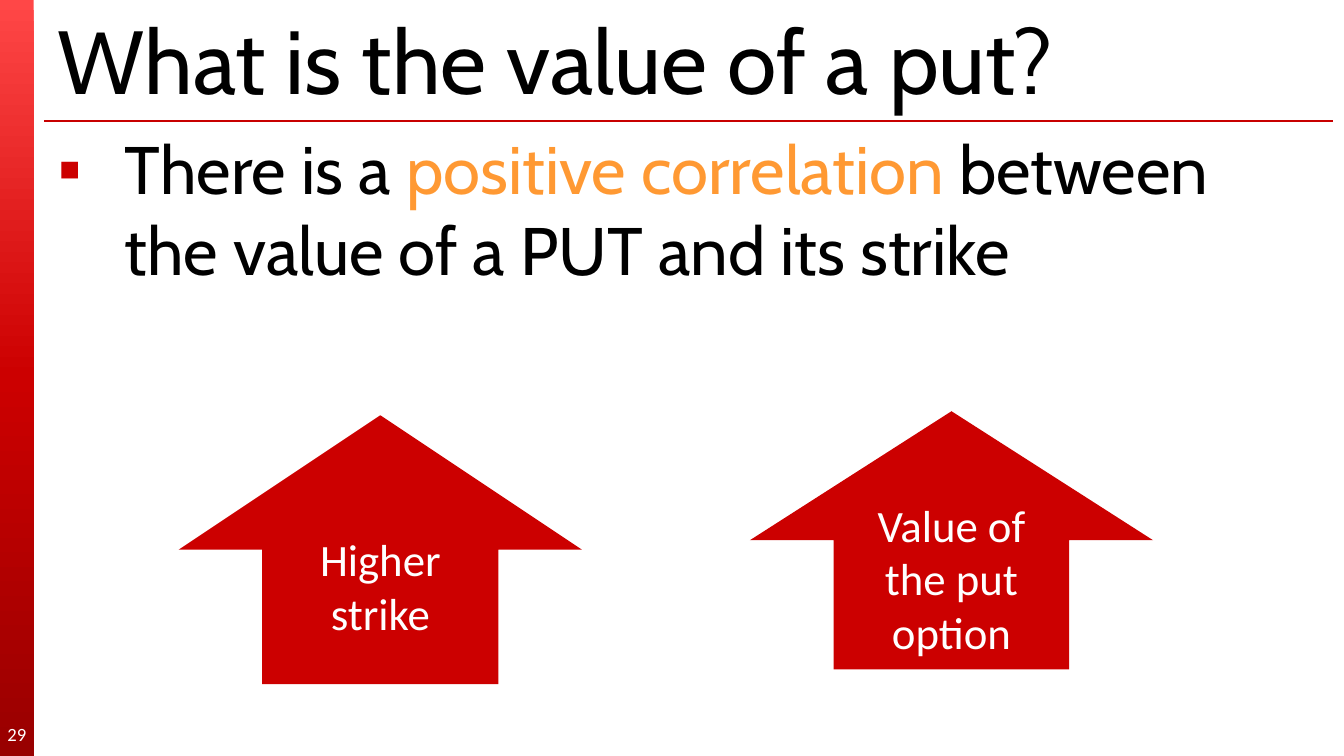
from copy import deepcopy

from lxml import etree
from pptx import Presentation
from pptx.dml.color import RGBColor
from pptx.enum.shapes import MSO_CONNECTOR, MSO_SHAPE
from pptx.enum.text import MSO_ANCHOR, MSO_AUTO_SIZE, PP_ALIGN
from pptx.oxml.ns import qn
from pptx.util import Inches, Pt

RECT = MSO_SHAPE.RECTANGLE
ARROW = MSO_SHAPE.UP_ARROW
LINE = MSO_CONNECTOR.STRAIGHT
MIDDLE = MSO_ANCHOR.MIDDLE
TOP = MSO_ANCHOR.TOP
LEFT = PP_ALIGN.LEFT
CENTER = PP_ALIGN.CENTER
FIXED = MSO_AUTO_SIZE.NONE

WIDTH = 10
HEIGHT = WIDTH * 9 / 16
RED, BLACK, WHITE, ORANGE = "CC0000", "000000", "FFFFFF", "FF9933"
HEAD, BODY = "Cabin", "Calibri"


def color(code):
    return RGBColor.from_string(code)


def add_run(para, text, size, font, code):
    run = para.add_run()
    run.text = text
    run.font.size = Pt(size)
    run.font.name = font
    run.font.color.rgb = color(code)


def add_label(shape, lines, size):
    frame = shape.text_frame
    frame.word_wrap = True
    frame.vertical_anchor = MIDDLE
    for i, line in enumerate(lines):
        para = frame.add_paragraph() if i else frame.paragraphs[0]
        para.alignment = CENTER
        add_run(para, line, size, BODY, WHITE)


def add_block(shapes, kind, box):
    shape = shapes.add_shape(kind, *map(Inches, box))
    shape.shadow.inherit = False
    shape.fill.solid()
    shape.fill.fore_color.rgb = color(RED)
    shape.line.fill.background()
    return shape


def add_arrow(shapes, box, shaft):
    arrow = add_block(shapes, ARROW, box)
    arrow.adjustments[0] = shaft
    arrow.adjustments[1] = 0.5
    return arrow


def add_bar(slide):
    bar = add_block(slide.shapes, RECT, (0, 0, 0.25, HEIGHT))
    bar.fill.gradient()
    bar.fill.gradient_angle = 270
    stops = bar._element.spPr.find(".//" + qn("a:gsLst"))
    stops.append(deepcopy(stops[-1]))
    tints = ((0, "FF4747"), (0.5, RED), (1, "990000"))
    for stop, (place, code) in zip(bar.fill.gradient_stops, tints):
        stop.position = place
        stop.color.rgb = color(code)


def add_rule(slide):
    ends = map(Inches, (0.33, 0.9, 9.92, 0.9))
    rule = slide.shapes.add_connector(LINE, *ends)
    rule.line.color.rgb = color("C80000")
    rule.line.width = Pt(0.75)
    etree.SubElement(rule._element.spPr, qn("a:effectLst"))


def place_text(holder, box, anchor):
    holder.left, holder.top, holder.width, holder.height = map(Inches, box)
    frame = holder.text_frame
    frame.auto_size = FIXED
    frame.word_wrap = True
    frame.vertical_anchor = anchor
    para = frame.paragraphs[0]
    para.alignment = LEFT
    return para


def set_bullet(para, mark, code, indent):
    props = para._p.get_or_add_pPr()
    props.set("marL", str(Inches(indent)))
    props.set("indent", str(-Inches(indent)))
    tint = etree.SubElement(props, qn("a:buClr"))
    etree.SubElement(tint, qn("a:srgbClr"), val=code)
    etree.SubElement(props, qn("a:buChar"), char=mark)


def add_number(slide, text):
    box = slide.shapes.add_textbox(*map(Inches, (0, 5.31, 0.25, 0.3)))
    frame = box.text_frame
    frame.margin_left = frame.margin_right = 0
    frame.margin_top = frame.margin_bottom = 0
    add_label(box, [text], 10)


def add_strike(slide):
    group = slide.shapes.add_group_shape()
    add_arrow(group.shapes, (1.33, 3.09, 3, 2), 0.586)
    label = add_block(group.shapes, RECT, (2.04, 3.86, 1.58, 1))
    add_label(label, ["Higher", "strike"], 24)


def main():
    deck = Presentation()
    deck.slide_width = Inches(WIDTH)
    deck.slide_height = Inches(HEIGHT)
    slide = deck.slides.add_slide(deck.slide_layouts[1])

    add_bar(slide)
    add_rule(slide)

    title, body = slide.placeholders
    para = place_text(title, (0.33, 0.06, 9.58, 0.75), MIDDLE)
    add_run(para, "What is the value of a put?", 48, HEAD, BLACK)

    para = place_text(body, (0.33, 0.9, 9.33, 4.33), TOP)
    para.space_before = Pt(7)
    set_bullet(para, "▪", RED, 0.5)
    for text, code in (
        ("There is a ", BLACK),
        ("positive correlation ", ORANGE),
        ("between the value of a PUT and its strike", BLACK),
    ):
        add_run(para, text, 36, HEAD, code)

    add_number(slide, "29")
    value = add_arrow(slide.shapes, (5.58, 3.06, 3, 1.92), 0.584)
    add_label(value, ["Value of the put option"], 24)
    add_strike(slide)
    deck.save("out.pptx")


if __name__ == "__main__":
    main()
